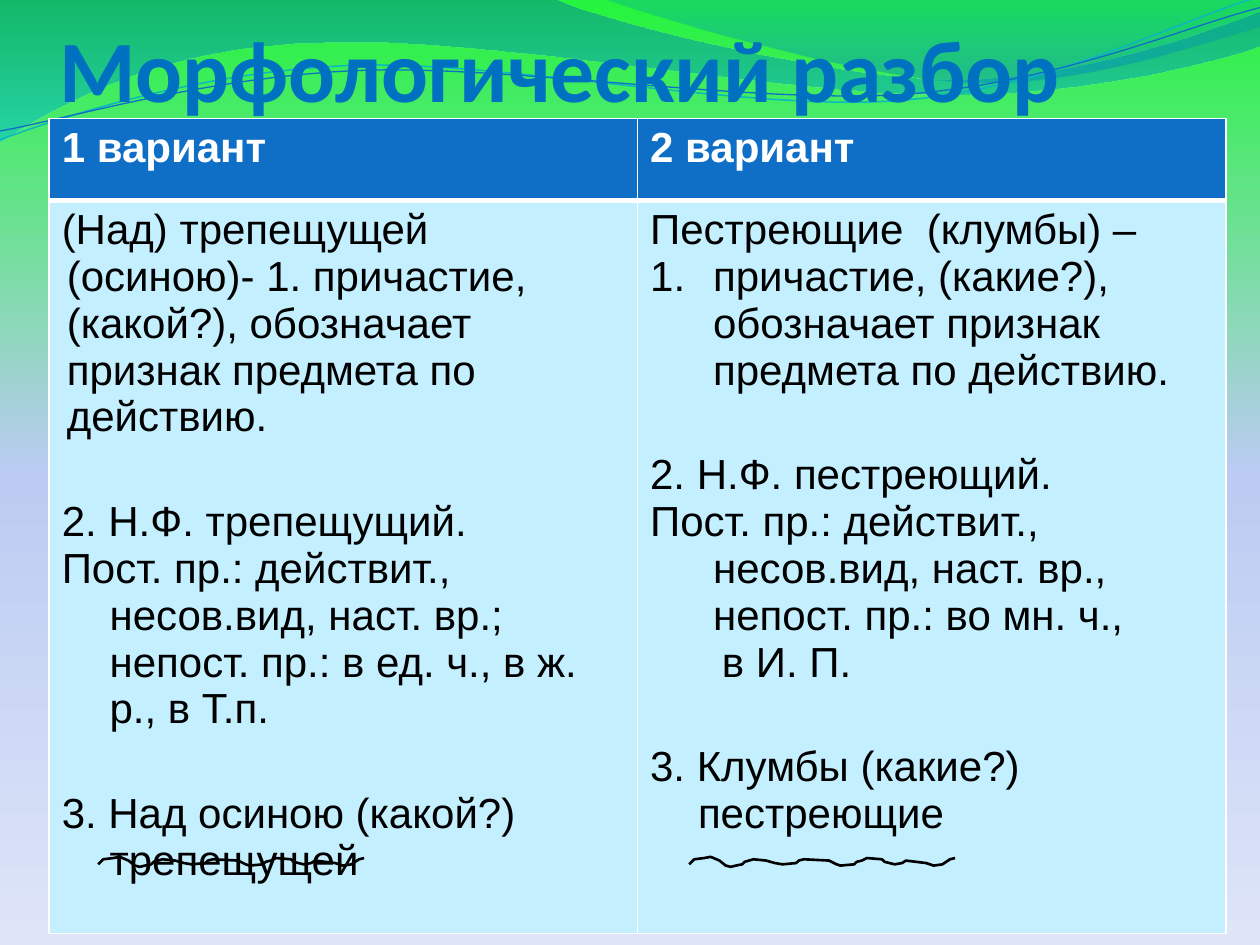
import pptx
import pptx.util
import pptx.dml.color
import pptx.enum.text
import pptx.oxml
import pptx.oxml.ns
from lxml import etree

Inches, Pt = pptx.util.Inches, pptx.util.Pt
RGBColor = pptx.dml.color.RGBColor
qn = pptx.oxml.ns.qn

BLUE = RGBColor(0x0F, 0x6F, 0xC6)
TITLE_BLUE = RGBColor(0x00, 0x70, 0xC0)
TEAL = RGBColor(0x0A, 0xB8, 0xBF)
PALE = RGBColor(0xC4, 0xEF, 0xFF)
WHITE = RGBColor(0xFF, 0xFF, 0xFF)
BLACK = RGBColor(0x00, 0x00, 0x00)

# Content
TITLE = "Морфологический разбор"
HEADERS = ["1 вариант", "2 вариант"]
GAP = 33  # points before each new step of the analysis
# (text, left margin, first-line indent, space before, numbered)
ANALYSES = [
    [
        ("(Над) трепещущей (осиною)- 1. причастие, (какой?), обозначает признак "
         "предмета по действию.", 0.04, -0.04, 0, False),
        ("2. Н.Ф. трепещущий.", 0.5, -0.5, GAP, False),
        ("Пост. пр.: действит., несов.вид, наст. вр.; непост. пр.: в ед. ч., "
         "в ж. р., в Т.п.", 0.38, -0.38, 0, False),
        ("3. Над осиною (какой?) трепещущей", 0.38, -0.38, GAP, False),
    ],
    [
        ("Пестреющие  (клумбы) –", 0, 0, 0, False),
        ("причастие, (какие?), обозначает признак предмета по действию.",
         0.5, -0.5, 0, True),
        ("2. Н.Ф. пестреющий.", 0.5, -0.5, GAP, False),
        ("Пост. пр.: действит., несов.вид, наст. вр., непост. пр.: во мн. ч.,",
         0.5, -0.5, 0, False),
        ("в И. П.", 0.57, 0, 0, False),
        ("3. Клумбы (какие?) пестреющие", 0.38, -0.38, GAP, False),
    ],
]

# Gradients: (position %, colour, opacity %)
BACKGROUND = [(0, "24F43D", 100), (50, "BBCBF2", 100), (100, "DEE5F8", 100)]

# Waves: a start point, then 2 numbers for a line or 6 for a curve
FILLED_WAVES = [
    ([(0, -0.01), (4.4, -0.01), (4.76, 0.17, 6.64, 0.63, 7.58, 0.63),
      (8.53, 0.63, 9.58, 0.26, 10, 0.09), (10.01, 0.36),
      (9.83, 0.44, 8.7, 0.76, 7.46, 0.75), (6.22, 0.75, 3.82, 0.28, 2.57, 0.34),
      (1.29, 0.35, 0.46, 0.83, -0.01, 1.13)],
     [(0, "0074A1", 45), (100, "00C6CF", 55)]),
    ([(4.79, -0.01), (5.09, 0.11, 6.82, 0.62, 7.69, 0.65),
      (8.56, 0.69, 9.61, 0.32, 10, 0.21), (10, 0)],
     [(0, "00A1A9", 30), (80, "008BBF", 45)]),
]
LINE_WAVES = [
    ([(0, 1.11), (0.48, 0.93, 1.58, 0.57, 2.77, 0.52),
      (3.95, 0.47, 5.93, 0.89, 7.13, 0.8), (8.33, 0.71, 9.38, 0.15, 9.98, -0.02)],
     TEAL, 0.85),
    ([(0, 1.04), (0.47, 0.96, 1.64, 0.61, 2.83, 0.56),
      (4.03, 0.51, 5.97, 0.83, 7.17, 0.75), (8.36, 0.67, 9.41, 0.21, 10, 0.06)],
     BLUE, 0.75),
]

# Wavy underline, relative to its left end
SQUIGGLE_Y = 6.8
SQUIGGLE_X = [0.78, 5.47]
SQUIGGLE = [
    (0, 0.06), (0.04, 0.02), (0.12, 0.01), (0.17, 0), (0.24, 0.03), (0.29, 0.07),
    (0.33, 0.08), (0.37, 0.07), (0.42, 0.06), (0.44, 0.04), (0.51, 0.02),
    (0.61, 0.03), (0.68, 0.05), (0.74, 0.06), (0.85, 0.05), (0.87, 0.03),
    (0.91, 0.02), (1.11, 0.03), (1.17, 0.06), (1.2, 0.07), (1.31, 0.06),
    (1.33, 0.04), (1.37, 0.03), (1.41, 0.01), (1.53, 0.02), (1.55, 0.04),
    (1.63, 0.06), (1.69, 0.05), (1.72, 0.03), (1.88, 0.05), (1.94, 0.07),
    (2.01, 0.06), (2.07, 0.02), (2.11, 0.01),
]


def set_gradient(parent, stops):
    """Replace the solid fill of parent with a top-to-bottom gradient."""
    grad = etree.Element(qn("a:gradFill"), rotWithShape="1")
    gs_list = etree.SubElement(grad, qn("a:gsLst"))
    for pos, color, opacity in stops:
        gs = etree.SubElement(gs_list, qn("a:gs"), pos=str(pos * 1000))
        clr = etree.SubElement(gs, qn("a:srgbClr"), val=color)
        if opacity < 100:
            etree.SubElement(clr, qn("a:alpha"), val=str(opacity * 1000))
    etree.SubElement(grad, qn("a:lin"), ang="5400000", scaled="0")
    parent.replace(parent.find(qn("a:solidFill")), grad)


def flatten(segments, steps=16):
    """Turn lines and cubic curves into a list of points."""
    points = [segments[0]]
    for seg in segments[1:]:
        if len(seg) == 2:
            points.append(seg)
            continue
        ctrl = [points[-1], seg[:2], seg[2:4], seg[4:]]
        for i in range(1, steps + 1):
            t = i / steps
            weights = ((1 - t) ** 3, 3 * t * (1 - t) ** 2, 3 * t * t * (1 - t), t ** 3)
            points.append(tuple(sum(w * c[k] for w, c in zip(weights, ctrl))
                                for k in (0, 1)))
    return points


def add_path(slide, points, close=False, color=None, width=1):
    pts = [(Inches(x), Inches(y)) for x, y in points]
    builder = slide.shapes.build_freeform(*pts[0])
    builder.add_line_segments(pts[1:], close=close)
    sp = builder.convert_to_shape()
    sp.shadow.inherit = False
    sp.fill.background()
    if color is None:
        sp.line.fill.background()
    else:
        sp.line.color.rgb = color
        sp.line.width = Pt(width)
    return sp


def style_run(p, size, font, color, bold):
    for r in p.runs:
        r.font.size, r.font.name, r.font.bold = Pt(size), font, bold
        r.font.color.rgb = color


def style_cell(cell, fill, bottom):
    tc_pr = cell._tc.get_or_add_tcPr()
    for tag, width in (("lnL", 1), ("lnR", 1), ("lnT", 1), ("lnB", bottom)):
        ln = etree.SubElement(tc_pr, qn("a:" + tag), w=str(Pt(width)))
        solid = etree.SubElement(ln, qn("a:solidFill"))
        etree.SubElement(solid, qn("a:srgbClr"), val=str(WHITE))
    cell.fill.solid()
    cell.fill.fore_color.rgb = fill


prs = pptx.Presentation()
prs.slide_width, prs.slide_height = Inches(10), Inches(7.5)
slide = prs.slides.add_slide(prs.slide_layouts[6])

# Background and waves
slide.background.fill.solid()
set_gradient(slide.element.find(".//" + qn("p:bgPr")), BACKGROUND)
for segments, stops in FILLED_WAVES:
    sp = add_path(slide, flatten(segments), close=True)
    sp.fill.solid()
    set_gradient(sp.element.spPr, stops)
for segments, color, width in LINE_WAVES:
    add_path(slide, flatten(segments), color=color, width=width)

# Title
sp = slide.shapes.add_textbox(Inches(0.47), 0, Inches(9), Inches(1.02))
tf = sp.text_frame
tf.word_wrap = True
tf.margin_left = tf.margin_right = tf.margin_bottom = 0
tf.margin_top = Inches(0.05)
tf.vertical_anchor = pptx.enum.text.MSO_ANCHOR.MIDDLE
tf.text = TITLE
style_run(tf.paragraphs[0], 50, "Calibri", TITLE_BLUE, True)

# Table
table = slide.shapes.add_table(2, 2, Inches(0.39), Inches(0.94),
                               Inches(9.34), Inches(6.25)).table
table.horz_banding = False
table.rows[0].height, table.rows[1].height = Inches(0.65), Inches(5.6)
for col, (header, analysis) in enumerate(zip(HEADERS, ANALYSES)):
    cell = table.cell(0, col)
    cell.text_frame.text = header
    style_run(cell.text_frame.paragraphs[0], 24, "Arial", WHITE, True)
    style_cell(cell, BLUE, 3)

    cell = table.cell(1, col)
    tf = cell.text_frame
    tf.text = "\n".join(item[0] for item in analysis)
    for p, (_, margin, indent, before, numbered) in zip(tf.paragraphs, analysis):
        style_run(p, 24, "Arial", BLACK, False)
        p.space_before = Pt(before)
        p_pr = p._p.get_or_add_pPr()
        p_pr.set("marL", str(Inches(margin)))
        p_pr.set("indent", str(Inches(indent)))
        if numbered:
            etree.SubElement(p_pr, qn("a:buFont"), typeface="+mj-lt")
            etree.SubElement(p_pr, qn("a:buAutoNum"), type="arabicPeriod")
    style_cell(cell, PALE, 1)

# Wavy underlines
for left in SQUIGGLE_X:
    add_path(slide, [(left + x, SQUIGGLE_Y + y) for x, y in SQUIGGLE],
             color=BLACK, width=1.5)

prs.save("out.pptx")
